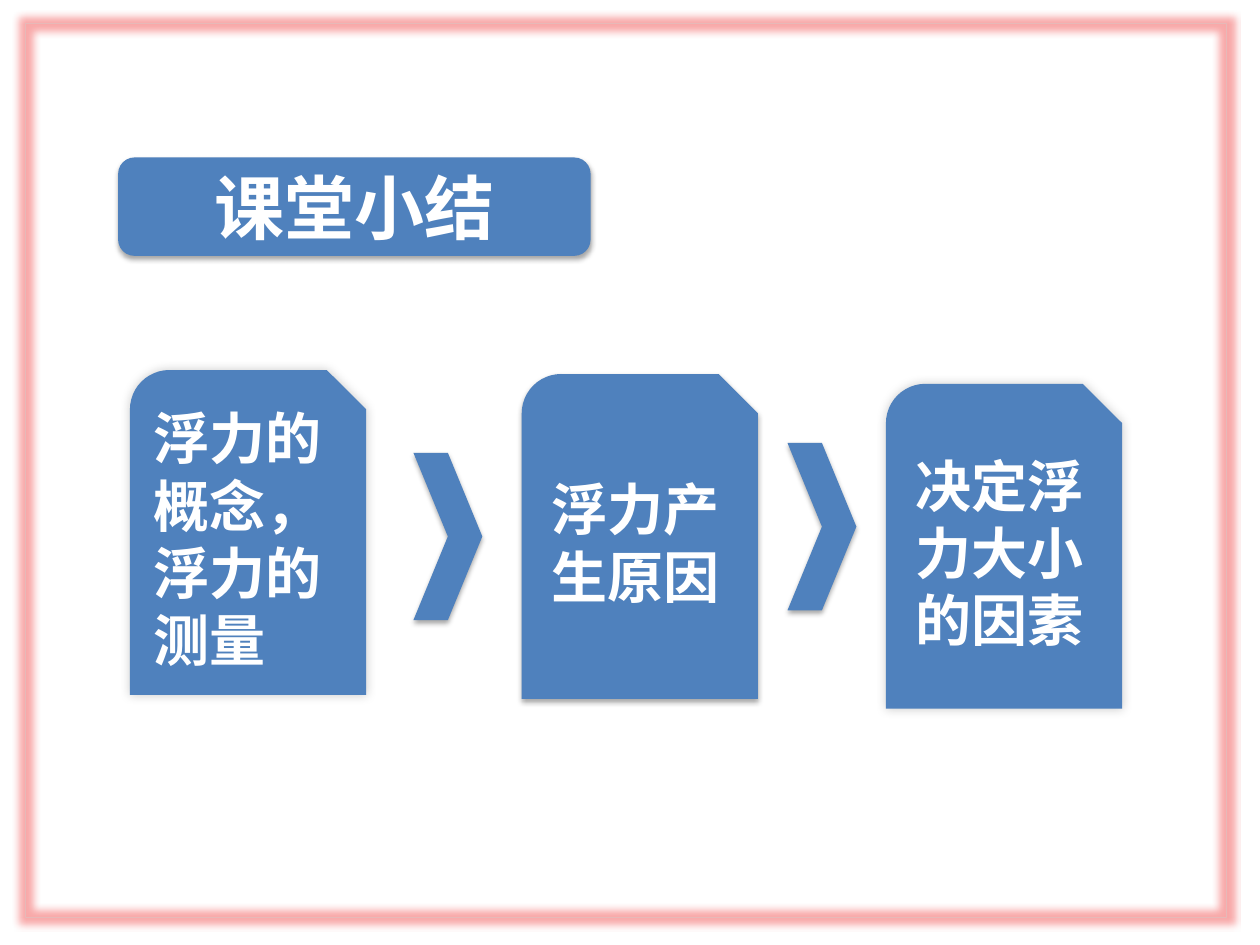
from lxml import etree
from pptx import Presentation
from pptx import util as u
from pptx.dml.color import RGBColor
from pptx.enum import shapes, text
from pptx.oxml import ns

COLS, ROWS = 32, 24
CELL = u.Inches(10) / COLS
FONT = "Noto Sans CJK SC"
BLUE, WHITE = "4F81BD", "FFFFFF"
SHAPE = shapes.MSO_SHAPE
CENTER = text.PP_ALIGN.CENTER
DROP = (35, 3.1, 1.8, 90)


def color(hex_value):
    """Turn a hex string into a colour."""
    return RGBColor.from_string(hex_value)


def grid(*cells):
    """Turn grid cells into lengths."""
    return [int(c * CELL) for c in cells]


def add_effect(s, tag, hex_value, alpha, **attrs):
    """Give a shape one shadow or glow effect."""
    s.shadow.inherit = False
    effects = s._element.spPr.find(ns.qn("a:effectLst"))
    effect = etree.SubElement(effects, ns.qn(tag))
    for key, value in attrs.items():
        effect.set(key, str(value))
    clr = etree.SubElement(effect, ns.qn("a:srgbClr"), val=hex_value)
    etree.SubElement(clr, ns.qn("a:alpha"), val=str(alpha * 1000))


def add_block(slide, kind, box, shadow=DROP):
    """Add a blue shape with a shadow."""
    s = slide.shapes.add_shape(kind, *grid(*box))
    s.fill.solid()
    s.fill.fore_color.rgb = color(BLUE)
    s.line.fill.background()
    alpha, blur, dist, angle = shadow
    add_effect(s, "a:outerShdw", "000000", alpha, blurRad=u.Pt(blur),
               dist=u.Pt(dist), dir=angle * 60000, algn="ctr", rotWithShape=0)
    return s


def write(s, lines, size=32, align=CENTER, bold=True, fill=WHITE):
    """Write formatted paragraphs into a shape."""
    tf = s.text_frame
    tf.word_wrap = True
    tf.vertical_anchor = text.MSO_ANCHOR.MIDDLE
    for i, line in enumerate(lines):
        p = tf.add_paragraph() if i else tf.paragraphs[0]
        p.alignment = align
        r = p.add_run()
        r.text = line
        r.font.size = u.Pt(size)
        r.font.bold = bold
        r.font.color.rgb = color(fill)
        r.font.name = FONT
        etree.SubElement(r._r.get_or_add_rPr(), ns.qn("a:ea"), typeface=FONT)


def add_title(slide, line, box):
    """Set the title placeholder on a rounded panel."""
    add_block(slide, SHAPE.ROUNDED_RECTANGLE, box)
    title = slide.shapes.title
    title.left, title.top, title.width, title.height = grid(*box)
    slide.shapes._spTree.append(title._element)
    write(title, [line], size=40)


def add_card(slide, lines, col, row, align=CENTER, shadow=DROP):
    """Add one summary card."""
    s = add_block(slide, SHAPE.SNIP_ROUND_RECTANGLE, (col, row, 6, 8.25), shadow)
    write(s, lines, align=align)


def add_frame(slide, box):
    """Add the glowing outline around the slide."""
    s = slide.shapes.add_shape(SHAPE.FLOWCHART_PROCESS, *grid(*box))
    s.fill.background()
    s.line.color.rgb = color("E6B9B8")
    s.line.width = u.Pt(0.5)
    add_effect(s, "a:glow", "EE2727", 40, rad=u.Pt(8))


def main():
    """Build the lesson summary slide."""
    prs = Presentation()
    prs.slide_width, prs.slide_height = grid(COLS, ROWS)
    slide = prs.slides.add_slide(prs.slide_layouts[5])
    add_title(slide, "课堂小结", (3, 4, 12, 2.5))
    add_card(slide, ["浮力的", "概念，", "浮力的测量"], 3.3, 9.4,
             align=text.PP_ALIGN.LEFT, shadow=(20, 6, 0, 315))
    add_card(slide, ["浮力产生原因"], 13.25, 9.5)
    add_card(slide, ["决定浮力大小的因素"], 22.5, 9.75, shadow=(20, 6, 0, 225))
    for col, row in ((10.5, 11.5), (20, 11.25)):
        add_block(slide, SHAPE.CHEVRON, (col, row, 1.75, 4.25))
    add_frame(slide, (0.65, 0.6, 30.5, 22.7))
    prs.save("out.pptx")


if __name__ == "__main__":
    main()
